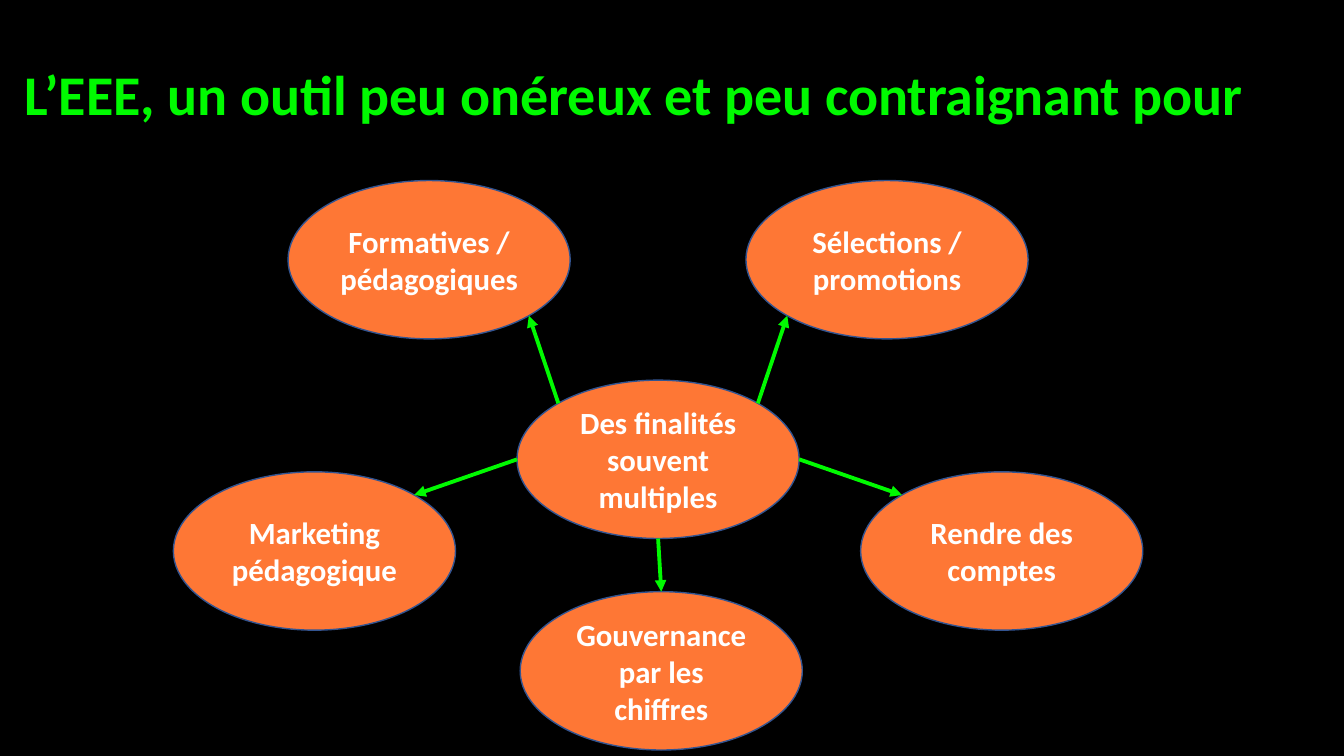
import math
from dataclasses import dataclass

import pptx
import pptx.chart.data
import pptx.dml.color
import pptx.enum.shapes
import pptx.enum.text
import pptx.oxml.ns
import pptx.util
from lxml import etree
from pptx.util import Cm


@dataclass(frozen=True)
class Theme:
    back: str = "000000"
    green: str = "00FA00"
    orange: str = "FE7735"
    edge: str = "325491"
    white: str = "FFFFFF"
    font: str = "Calibri"
    title: int = 40
    label: int = 22


@dataclass(frozen=True)
class Node:
    text: str
    dx: float
    dy: float
    start: int
    end: int


THEME = Theme()
LEFT, TOP, WIDTH, HEIGHT = 13.03, 9.58, 7.11, 3.99
HUB = Node("Des finalités souvent multiples", 0, 0, 0, 0)
GOALS = [
    Node("Formatives / pédagogiques", -5.77, -5.03, 225, 45),
    Node("Sélections / promotions", 5.77, -5.03, 315, 135),
    Node("Rendre des comptes", 8.66, 2.31, 0, 225),
    Node("Marketing pédagogique", -8.66, 2.31, 180, 315),
    Node("Gouvernance par les chiffres", 0.08, 5.33, 90, 270),
]


def color(code: str) -> pptx.dml.color.RGBColor:
    return pptx.dml.color.RGBColor.from_string(code)


def write(frame, text: str, *, size: int, ink: str, align=None) -> None:
    para = frame.paragraphs[0]
    para.alignment = align
    run = para.add_run()
    run.text = text
    run.font.name = THEME.font
    run.font.size = pptx.util.Pt(size)
    run.font.bold = True
    run.font.color.rgb = color(ink)


def draw(slide, node: Node) -> None:
    oval = slide.shapes.add_shape(
        pptx.enum.shapes.MSO_SHAPE.OVAL,
        Cm(LEFT + node.dx), Cm(TOP + node.dy), Cm(WIDTH), Cm(HEIGHT))
    oval.shadow.inherit = False
    oval.fill.solid()
    oval.fill.fore_color.rgb = color(THEME.orange)
    oval.line.color.rgb = color(THEME.edge)
    oval.line.width = pptx.util.Pt(1)
    frame = oval.text_frame
    frame.word_wrap = True
    frame.vertical_anchor = pptx.enum.text.MSO_ANCHOR.MIDDLE
    write(frame, node.text, size=THEME.label, ink=THEME.white,
          align=pptx.enum.text.PP_ALIGN.CENTER)


def rim(node: Node, angle: int) -> tuple[Cm, Cm]:
    turn = math.radians(angle)
    return (Cm(LEFT + node.dx + WIDTH / 2 * (1 + math.cos(turn))),
            Cm(TOP + node.dy + HEIGHT / 2 * (1 + math.sin(turn))))


def link(slide, goal: Node) -> None:
    arrow = slide.shapes.add_connector(
        pptx.enum.shapes.MSO_CONNECTOR.STRAIGHT,
        *rim(HUB, goal.start), *rim(goal, goal.end))
    arrow.line.color.rgb = color(THEME.green)
    arrow.line.width = pptx.util.Pt(2.75)
    name = pptx.oxml.ns.qn
    etree.SubElement(arrow.line._get_or_add_ln(), name("a:tailEnd"), type="triangle")
    etree.SubElement(arrow._element.spPr, name("a:effectLst"))


def main() -> None:
    deck = pptx.Presentation()
    deck.slide_width, deck.slide_height = Cm(33.87), Cm(19.05)
    slide = deck.slides.add_slide(deck.slide_layouts[6])
    slide.background.fill.solid()
    slide.background.fill.fore_color.rgb = color(THEME.back)

    for node in [HUB, *GOALS]:
        draw(slide, node)
    for goal in GOALS:
        link(slide, goal)

    title = slide.shapes.add_textbox(Cm(0.38), Cm(1.37), Cm(31.75), Cm(1.96))
    title.text_frame.word_wrap = False
    title.text_frame.auto_size = pptx.enum.text.MSO_AUTO_SIZE.SHAPE_TO_FIT_TEXT
    write(title.text_frame, "L’EEE, un outil peu onéreux et peu contraignant pour",
          size=THEME.title, ink=THEME.green)
    deck.save("out.pptx")


if __name__ == "__main__":
    main()
